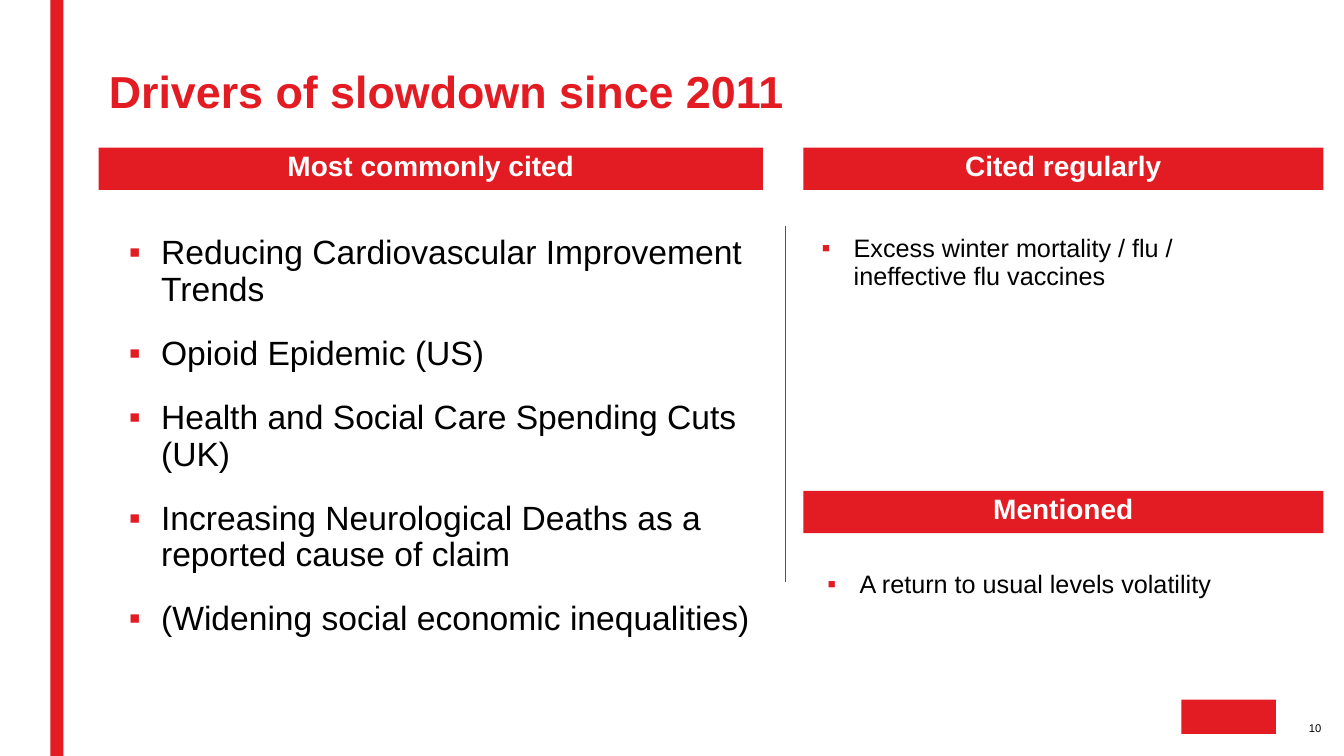
from lxml.etree import SubElement
from pptx import Presentation
from pptx.dml.color import RGBColor
from pptx.enum.shapes import MSO_CONNECTOR, MSO_SHAPE
from pptx.enum.text import MSO_ANCHOR, MSO_AUTO_SIZE, PP_ALIGN
from pptx.oxml.ns import qn
from pptx.util import Pt

RED = RGBColor(0xE3, 0x1B, 0x23)
LINE_RED = RGBColor(0xE3, 0x16, 0x1E)
BLACK = RGBColor(0, 0, 0)
WHITE = RGBColor(255, 255, 255)

TITLE = "Drivers of slowdown since 2011"
PAGE = "10"
COMMON = [
    "Reducing Cardiovascular Improvement Trends",
    "Opioid Epidemic (US)",
    "Health and Social Care Spending Cuts (UK)",
    "Increasing Neurological Deaths as a reported cause of claim",
    "(Widening social economic inequalities)",
]
REGULAR = ["Excess winter mortality / flu / ineffective flu vaccines"]
MENTIONED = ["A return to usual levels volatility"]

W, H = 960, 540
LEFT, RIGHT = 70.5, 573.8
LEFT_W, RIGHT_W = 474.5, 371.5
TOP, LOWER = 105.4, 350.6
BAR_H = 30.2
LIST_TOP, LIST_W = 165, 332.6
INDENT = 23

HEADERS = [
    ("Most commonly cited", LEFT, TOP, LEFT_W),
    ("Cited regularly", RIGHT, TOP, RIGHT_W),
    ("Mentioned", RIGHT, LOWER, RIGHT_W),
]


def put_text(sp, lines, size=18, color=BLACK, bold=False, bullet=False,
             align=PP_ALIGN.LEFT, anchor=MSO_ANCHOR.TOP, inset=None):
    tf = sp.text_frame
    tf.word_wrap = True
    tf.auto_size = MSO_AUTO_SIZE.NONE
    tf.vertical_anchor = anchor
    if inset is not None:
        tf.margin_left = tf.margin_right = Pt(inset)
        tf.margin_top = tf.margin_bottom = Pt(inset)
    for i, line in enumerate(lines):
        p = tf.add_paragraph() if i else tf.paragraphs[0]
        if bullet:
            pPr = p._p.get_or_add_pPr()
            pPr.set("marL", str(Pt(INDENT)))
            pPr.set("indent", str(-Pt(INDENT)))
            clr = SubElement(pPr, qn("a:buClr"))
            SubElement(clr, qn("a:srgbClr"), val=str(RED))
            SubElement(pPr, qn("a:buFont"), typeface="Arial")
            SubElement(pPr, qn("a:buChar"), char="▪")
        p.alignment = align
        p.line_spacing = 0.9
        p.space_before = Pt(20 if i else 0)
        r = p.add_run()
        r.text = line
        r.font.name = "Arial"
        r.font.size = Pt(size)
        r.font.bold = bold
        r.font.color.rgb = color


def place(sp, x, y, w, h):
    sp.left, sp.top, sp.width, sp.height = Pt(x), Pt(y), Pt(w), Pt(h)
    return sp


def add_box(s, x, y, w, h):
    return s.shapes.add_textbox(Pt(x), Pt(y), Pt(w), Pt(h))


def add_bar(s, x, y, w, h):
    sp = s.shapes.add_shape(MSO_SHAPE.RECTANGLE, Pt(x), Pt(y), Pt(w), Pt(h))
    sp.shadow.inherit = False
    sp.fill.solid()
    sp.fill.fore_color.rgb = RED
    sp.line.fill.background()
    return sp


prs = Presentation()
prs.slide_width, prs.slide_height = Pt(W), Pt(H)
s = prs.slides.add_slide(prs.slide_layouts[1])

add_bar(s, 36, 0, 9.4, H)
add_bar(s, 843.8, 499.7, 67.7, 24.5)
put_text(add_box(s, 897.8, 515.5, 46.1, 9.4), [PAGE], size=8,
         align=PP_ALIGN.RIGHT, anchor=MSO_ANCHOR.BOTTOM, inset=0)

put_text(place(s.shapes.title, LEFT, 0, 841.7, 87.8), [TITLE], size=32,
         color=RED, bold=True, anchor=MSO_ANCHOR.BOTTOM)
put_text(place(s.placeholders[1], 579.6, LIST_TOP, LIST_W, 134.6), REGULAR,
         bullet=True)
put_text(add_box(s, 85, LIST_TOP, LEFT_W, 305.3), COMMON, size=24, bullet=True)
put_text(add_box(s, 583.9, 404.6, LIST_W, 65.5), MENTIONED, bullet=True)

for text, x, y, w in HEADERS:
    put_text(add_bar(s, x, y, w, BAR_H), [text], size=20, color=WHITE,
             bold=True, align=PP_ALIGN.CENTER)

divider = s.shapes.add_connector(MSO_CONNECTOR.STRAIGHT, Pt(561), Pt(161.3),
                                 Pt(561), Pt(415.4))
divider.line.color.rgb = LINE_RED
divider.line.width = Pt(0.75)
SubElement(divider._element.spPr, qn("a:effectLst"))

prs.save("out.pptx")
